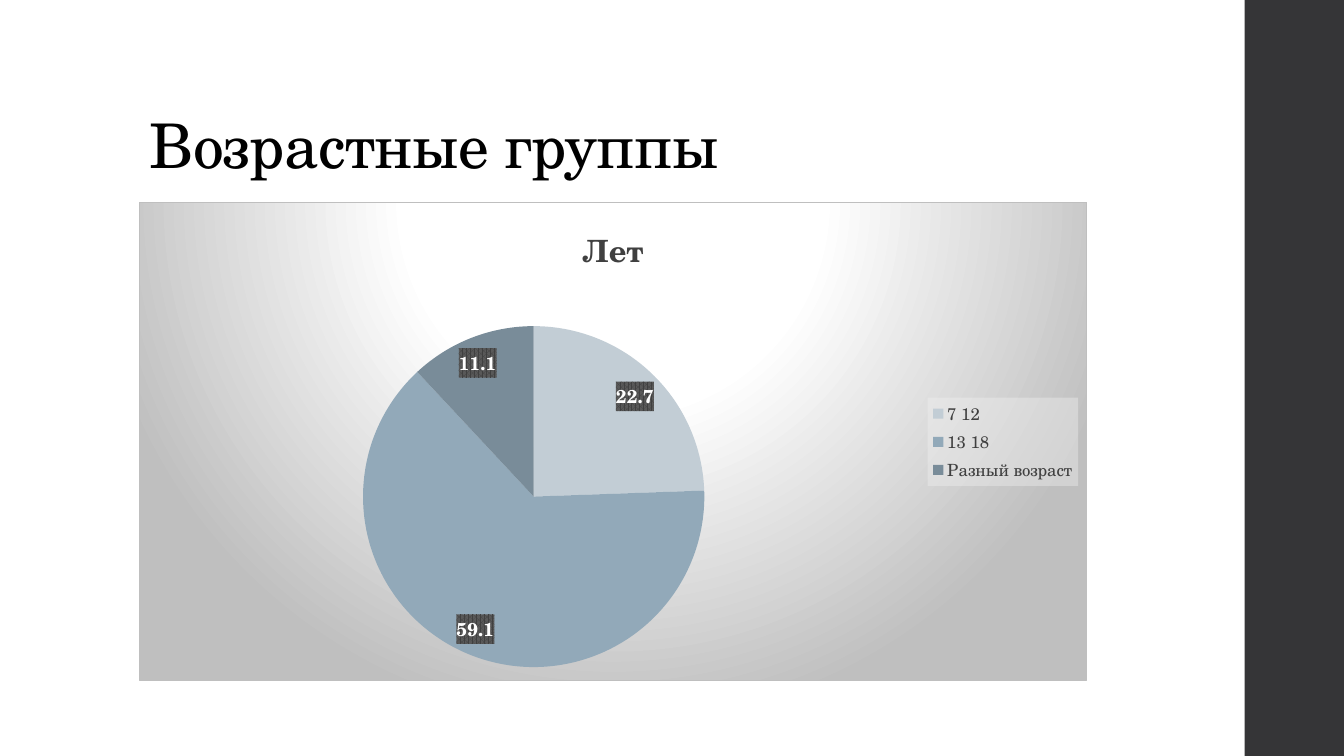
from lxml import etree
from pptx import Presentation
from pptx.chart.data import CategoryChartData
from pptx.dml.color import RGBColor
from pptx.enum.chart import XL_CHART_TYPE, XL_LABEL_POSITION, XL_LEGEND_POSITION
from pptx.enum.shapes import MSO_SHAPE
from pptx.enum.text import MSO_ANCHOR, MSO_AUTO_SIZE, PP_ALIGN
from pptx.util import Pt

PIE = XL_CHART_TYPE.PIE
BEST = XL_LABEL_POSITION.BEST_FIT
RIGHT = XL_LEGEND_POSITION.RIGHT
RECT = MSO_SHAPE.RECTANGLE
FACE = "TeX Gyre Schola"
SPACE = ('xmlns:a="http://schemas.openxmlformats.org/drawingml/2006/main" '
         'xmlns:c="http://schemas.openxmlformats.org/drawingml/2006/chart"')


def style(font, size, color, bold=False):
    font.name = FACE
    font.size = Pt(size)
    font.bold = bold
    font.color.rgb = RGBColor.from_string(color)


def paint(owner, fill):
    """Give a chart part its fill, just ahead of its text properties."""
    props = etree.fromstring(f"<c:spPr {SPACE}>{fill}</c:spPr>")
    owner.find("{*}txPr").addprevious(props)


deck = Presentation()
deck.slide_width, deck.slide_height = Pt(960), Pt(540)
slide = deck.slides.add_slide(deck.slide_layouts[5])

# Side band
band = slide.shapes.add_shape(RECT, Pt(889), Pt(0), Pt(71), Pt(540))
band.shadow.inherit = False
band.fill.solid()
band.fill.fore_color.rgb = RGBColor.from_string("353537")
band.line.fill.background()

# Title
title = slide.shapes.title
title.left, title.top, title.width, title.height = Pt(99.4), Pt(28.8), Pt(763), Pt(104.4)
frame = title.text_frame
frame.text = "Возрастные группы"
frame.word_wrap = True
frame.auto_size = MSO_AUTO_SIZE.NONE
frame.vertical_anchor = MSO_ANCHOR.BOTTOM
para = frame.paragraphs[0]
para.alignment = PP_ALIGN.LEFT
para.line_spacing = 0.9
style(para.font, 44, "000000")
para.runs[0].font._element.set("spc", "-50")

# Pie chart
data = CategoryChartData()
data.categories = ["7 12", "13 18", "Разный возраст"]
data.add_series("Лет", [22.7, 59.1, 11.1])
chart = slide.shapes.add_chart(PIE, Pt(99.4), Pt(144.4), Pt(677), Pt(342.4), data).chart
style(chart.font, 10, "000000")
chart.has_title = True
head = chart.chart_title.text_frame
head.text = "Лет"
style(head.paragraphs[0].font, 22, "404040", True)

plot = chart.plots[0]
plot.vary_by_categories = True
for i, color in enumerate(["C2CDD5", "92A9B9", "798C99"]):
    fill = plot.series[0].points[i].format.fill
    fill.solid()
    fill.fore_color.rgb = RGBColor.from_string(color)

# Value labels
labels = plot.series[0].data_labels
labels.show_value = True
labels.show_percentage = False
labels.show_category_name = False
labels.show_legend_key = False
labels.position = BEST
style(labels.font, 13.3, "FFFFFF", True)
paint(labels._element,
      '<a:pattFill prst="pct75"><a:fgClr><a:srgbClr val="404040"/></a:fgClr>'
      '<a:bgClr><a:srgbClr val="595959"/></a:bgClr></a:pattFill>')

# Legend
chart.has_legend = True
legend = chart.legend
legend.position = RIGHT
legend.include_in_layout = False
style(legend.font, 12, "404040")
paint(legend._element,
      '<a:solidFill><a:srgbClr val="F2F2F2"><a:alpha val="39000"/></a:srgbClr></a:solidFill>')

# Chart background
stops = "".join(f'<a:gs pos="{at * 1000}"><a:srgbClr val="{color}"/></a:gs>'
                for at, color in [(0, "FFFFFF"), (39, "FFFFFF"), (100, "BFBFBF")])
paint(chart._chartSpace,
      f'<a:gradFill><a:gsLst>{stops}</a:gsLst><a:path path="circle">'
      '<a:fillToRect l="50000" t="-80000" r="50000" b="180000"/></a:path></a:gradFill>'
      '<a:ln w="9525"><a:solidFill><a:srgbClr val="BFBFBF"/></a:solidFill></a:ln>')

deck.save("out.pptx")
